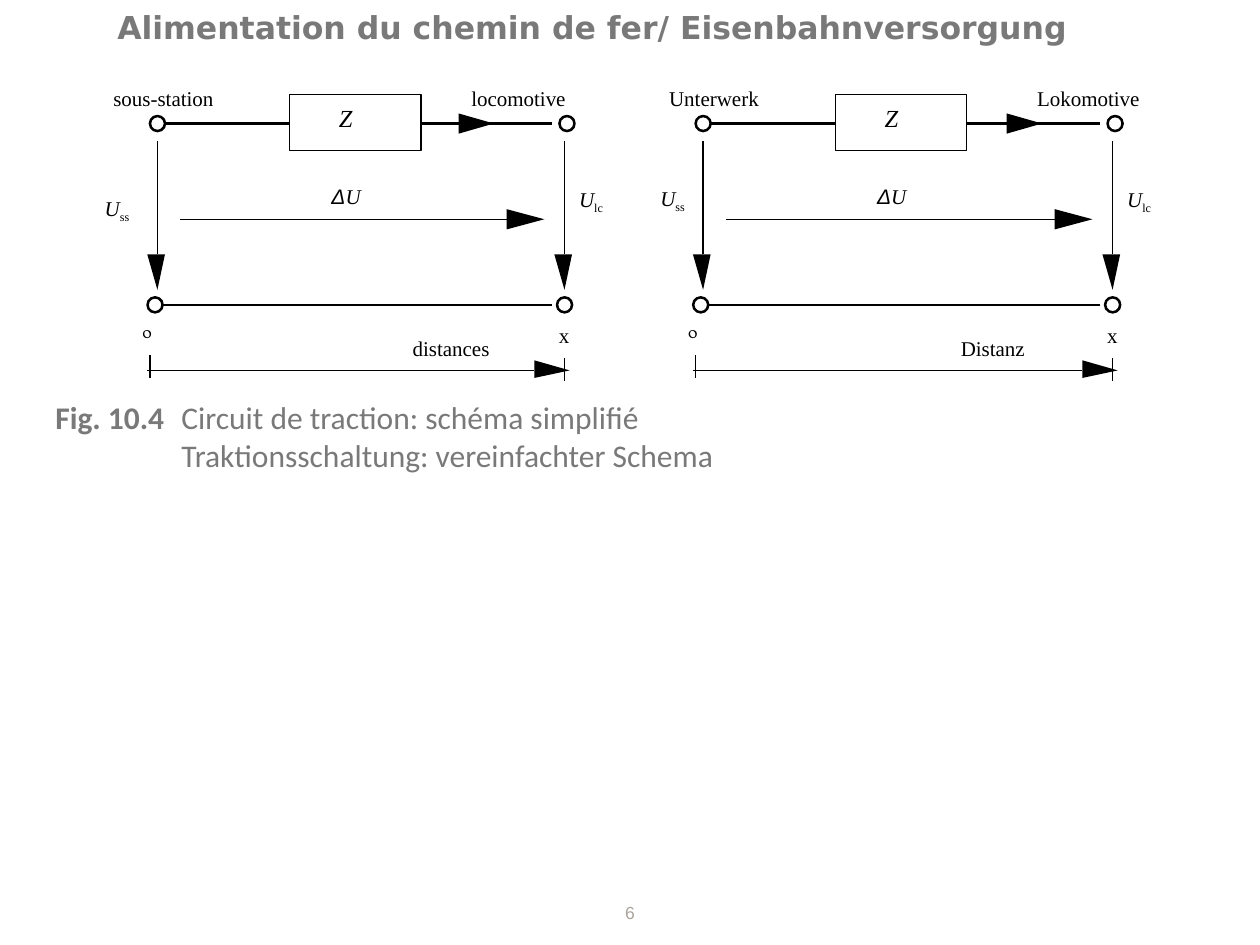
import dataclasses
import typing

import lxml.etree
import pptx
import pptx.dml.color
import pptx.enum.shapes
import pptx.enum.text
import pptx.oxml.ns
import pptx.util

Pt = pptx.util.Pt
BLACK = pptx.dml.color.RGBColor(0x00, 0x00, 0x00)
WHITE = pptx.dml.color.RGBColor(0xFF, 0xFF, 0xFF)
GREY = pptx.dml.color.RGBColor(0x79, 0x79, 0x79)
SAND = pptx.dml.color.RGBColor(0xAC, 0xA3, 0x9A)
SERIF = "Times New Roman"
THIN, THICK = 0.75, 1.45
TOP, BASE, DROP, SCALE = 70.6, 174.2, 125.3, 211.7
HEAD, WING, SLIM = 20.2, 5.8, 4.3


@dataclasses.dataclass
class Circuit:
    left: float
    right: float
    station: str
    train: str
    length: str
    station_x: float
    train_x: float
    volt_x: float
    volt_y: float


@dataclasses.dataclass
class Arrow:
    """Shaft from (x, y) to the tip; slim is the wing on the right or lower side."""
    x: float
    y: float
    tip_x: float
    tip_y: float
    head: float = HEAD
    slim: float = WING


def write(para: typing.Any, text: str, *, size: float = 12, font: str = SERIF,
          color: typing.Any = BLACK, bold: bool = False, italic: bool = False,
          base: int = 0) -> None:
    run = para.add_run()
    run.text = text
    if base:
        run._r.get_or_add_rPr().set("baseline", str(base * 1000))
    run.font.size, run.font.name = Pt(size), font
    run.font.bold, run.font.italic = bold, italic
    run.font.color.rgb = color


def add_box(shapes: typing.Any, x: float, y: float, w: float, h: float,
            inset: tuple[float, float] = (0, 0)) -> typing.Any:
    """Add a wrapping text box and return its frame."""
    frame = shapes.add_textbox(Pt(x), Pt(y), Pt(w), Pt(h)).text_frame
    frame.word_wrap = True
    frame.margin_left = frame.margin_right = Pt(inset[0])
    frame.margin_top = frame.margin_bottom = Pt(inset[1])
    return frame


def label(shapes: typing.Any, x: float, y: float, w: float, text: str,
          **style: typing.Any) -> typing.Any:
    para = add_box(shapes, x, y, w, 14.4).paragraphs[0]
    write(para, text, **style)
    return para


def draw_line(shapes: typing.Any, x: float, y: float, end_x: float, end_y: float,
              width: float = THIN) -> None:
    line = shapes.add_connector(pptx.enum.shapes.MSO_CONNECTOR.STRAIGHT,
                                Pt(x), Pt(y), Pt(end_x), Pt(end_y))
    line.line.color.rgb, line.line.width = BLACK, Pt(width)
    lxml.etree.SubElement(line._element.spPr, pptx.oxml.ns.qn("a:effectLst"))


def draw_shape(shapes: typing.Any, kind: typing.Any, x: float, y: float,
               w: float, h: float, width: float) -> None:
    shape = shapes.add_shape(kind, Pt(x), Pt(y), Pt(w), Pt(h))
    shape.shadow.inherit = False
    shape.fill.solid()
    shape.fill.fore_color.rgb = WHITE
    shape.line.color.rgb, shape.line.width = BLACK, Pt(width)


def draw_arrow(shapes: typing.Any, arrow: Arrow) -> None:
    x, y = arrow.tip_x, arrow.tip_y
    if arrow.x == x:
        neck = (x, y - arrow.head)
        wings = [(x - WING, neck[1]), neck, (x + arrow.slim, neck[1])]
    else:
        neck = (x - arrow.head, y)
        wings = [(neck[0], y + arrow.slim), neck, (neck[0], y - WING)]
    pen = shapes.build_freeform(Pt(x), Pt(y))
    pen.add_line_segments([(Pt(a), Pt(b)) for a, b in wings], close=True)
    head = pen.convert_to_shape()
    head.shadow.inherit = False
    head.fill.solid()
    head.fill.fore_color.rgb = BLACK
    head.line.fill.background()
    draw_line(shapes, arrow.x, arrow.y, *neck)


def draw_circuit(shapes: typing.Any, part: Circuit) -> None:
    left, right = part.left, part.right
    kinds = pptx.enum.shapes.MSO_SHAPE
    for y in (TOP, BASE):
        draw_line(shapes, right - 7.2, y, left, y, THICK)
    draw_shape(shapes, kinds.RECTANGLE, left + 75.6, 54.2, 75, 31.8, THIN)

    for arrow in (
        Arrow(right - 67.7, TOP, right - 40.4, TOP),
        Arrow(left + 13, DROP, right - 11.5, DROP, head=21.6),
        Arrow(left - 5.8, SCALE, right + 2.9, SCALE, slim=SLIM),
        Arrow(left, 80.6, left, 165.6, slim=SLIM),
        Arrow(right, 80.6, right, 165.6, slim=SLIM),
    ):
        draw_arrow(shapes, arrow)
    for x, y in ((left - 4.3, 203), (right, 204.5)):
        draw_line(shapes, x, y, x, y + 13)
    for x, y in ((left, TOP), (left - 1.4, BASE), (right + 1.4, TOP), (right, BASE)):
        draw_shape(shapes, kinds.OVAL, x - 4.3, y - 4.3, 8.6, 8.6, THICK)

    label(shapes, left + 103.7, 59, 9, "Z", size=14, italic=True)
    delta = label(shapes, left + 99.4, 105.1, 23, "Δ", font="Arial", italic=True)
    write(delta, "U", italic=True)
    for x, y, sub in ((left + part.volt_x, part.volt_y, "ss"),
                      (right + 8.3, 106.6, "lc")):
        volt = label(shapes, x, y, 18, "U", italic=True)
        write(volt, sub, base=-25)
    label(shapes, left - 8.6, 184.3, 7, "0", size=9, font="Vollkorn")
    label(shapes, right - 3.2, 184.3, 7, "x")
    label(shapes, left + part.station_x, 49, 75, part.station)
    label(shapes, right + part.train_x, 49, 60, part.train)
    label(shapes, right - 86.8, 191.5, 46, part.length)


def main() -> None:
    deck = pptx.Presentation()
    deck.slide_width, deck.slide_height = Pt(720), Pt(540)
    slide = deck.slides.add_slide(deck.slide_layouts[5])

    title = slide.shapes.title
    title.left, title.top, title.width, title.height = Pt(59.8), Pt(0.7), Pt(578), Pt(44)
    frame = title.text_frame
    frame.auto_size = pptx.enum.text.MSO_AUTO_SIZE.NONE
    frame.vertical_anchor = pptx.enum.text.MSO_ANCHOR.TOP
    frame.paragraphs[0].alignment = pptx.enum.text.PP_ALIGN.LEFT
    write(frame.paragraphs[0], "Alimentation du chemin de fer/ Eisenbahnversorgung",
          size=18, font="DejaVu Sans", color=GREY, bold=True)

    for part in (
        Circuit(90, 322.6, "sous-station", "locomotive", "distances",
                -25.2, -53.3, -30.2, 111.6),
        Circuit(401.8, 635.8, "Unterwerk", "Lokomotive", "Distanz",
                -19.4, -43.2, -24.5, 105.8),
    ):
        draw_circuit(slide.shapes.add_group_shape().shapes, part)

    frame = add_box(slide.shapes, 31.7, 223.9, 645.8, 50.4, inset=(0, 3.6))
    for tag, text in (("Fig. 10.4", "Circuit de traction: schéma simplifié"),
                      ("", "Traktionsschaltung: vereinfachter Schema")):
        para = frame.paragraphs[0] if tag else frame.add_paragraph()
        tabs = lxml.etree.SubElement(para._p.get_or_add_pPr(),
                                     pptx.oxml.ns.qn("a:tabLst"))
        lxml.etree.SubElement(tabs, pptx.oxml.ns.qn("a:tab"),
                              pos=str(Pt(72)), algn="l")
        if tag:
            write(para, tag, size=18, font="Calibri", color=GREY, bold=True)
        write(para, "\t" + text, size=18, font="Calibri", color=GREY)

    frame = add_box(slide.shapes, 337.5, 512, 45, 22, inset=(7.2, 3.6))
    frame.paragraphs[0].alignment = pptx.enum.text.PP_ALIGN.CENTER
    write(frame.paragraphs[0], "6", size=10, font="Arial", color=SAND)

    deck.save("out.pptx")


if __name__ == "__main__":
    main()
